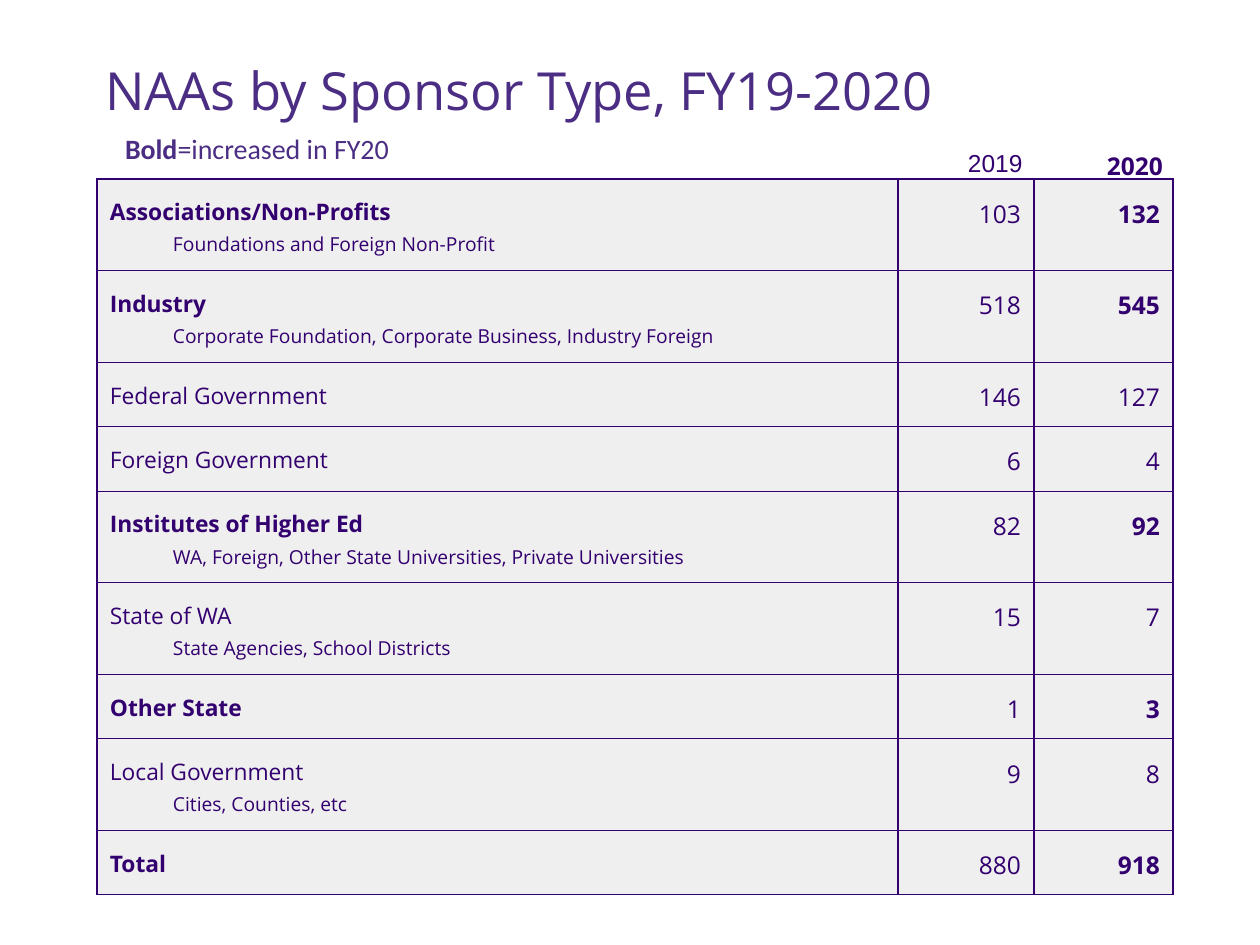
from lxml.etree import SubElement
from pptx import Presentation
from pptx.dml.color import RGBColor
from pptx.enum.text import MSO_ANCHOR as Anchor, MSO_AUTO_SIZE as AutoSize, PP_ALIGN as Align
from pptx.oxml.ns import qn
from pptx.util import Emu, Pt

SCALE = 914400 / 126
COLORS = {"title": "4B2E83", "text": "33006F", "border": "33006F", "cell": "EFEFEF"}
FONT = "Open Sans"
COLUMN_WIDTHS = (801, 136, 139)
SINGLE_HEIGHT, DOUBLE_HEIGHT = 63, 91
SPONSORS = [
    ("Associations/Non-Profits", "Foundations and Foreign Non-Profit", 103, 132),
    ("Industry", "Corporate Foundation, Corporate Business, Industry Foreign", 518, 545),
    ("Federal Government", None, 146, 127),
    ("Foreign Government", None, 6, 4),
    ("Institutes of Higher Ed",
     "WA, Foreign, Other State Universities, Private Universities", 82, 92),
    ("State of WA", "State Agencies, School Districts", 15, 7),
    ("Other State", None, 1, 3),
    ("Local Government", "Cities, Counties, etc", 9, 8),
    ("Total", None, 880, 918),
]


def px(length):
    """Turn pixels into EMU."""
    return Emu(round(length * SCALE))


def add_text(paragraph, text, size=14, color="text", font=FONT, bold=False,
             align=Align.LEFT, spacing=None, indent=0):
    """Add a formatted run to a paragraph and format the paragraph."""
    paragraph.alignment = align
    if spacing:
        paragraph.line_spacing = spacing
    if indent:
        properties = paragraph._p.get_or_add_pPr()
        properties.set("marL", str(px(indent)))
        properties.set("indent", "0")
    run = paragraph.add_run()
    run.text = text
    run.font.size = Pt(size)
    run.font.name = font
    run.font.bold = bold
    run.font.color.rgb = RGBColor.from_string(COLORS[color])


def format_frame(shape, anchor, margin_y):
    """Set wrapping, anchor and margins, and return the first paragraph."""
    frame = shape.text_frame
    frame.word_wrap = True
    frame.auto_size = AutoSize.NONE
    frame.vertical_anchor = anchor
    frame.margin_left = frame.margin_right = px(13)
    frame.margin_top = frame.margin_bottom = px(margin_y)
    return frame.paragraphs[0]


def add_title(slide, text):
    """Place and fill the title placeholder."""
    title = slide.shapes.title
    title.left, title.top, title.width, title.height = map(px, (92, -8, 1128, 136))
    paragraph = format_frame(title, Anchor.BOTTOM, 6)
    add_text(paragraph, text, size=30, color="title", spacing=0.9)


def add_box(slide, bounds, anchor=Anchor.BOTTOM, margin_y=13):
    """Add a text box and return its first paragraph."""
    box = slide.shapes.add_textbox(*map(px, bounds))
    return format_frame(box, anchor, margin_y)


def format_cell(cell):
    """Give a cell its borders, fill and margins."""
    properties = cell._tc.get_or_add_tcPr()
    for side in ("lnL", "lnR", "lnT", "lnB"):
        line = SubElement(properties, qn(f"a:{side}"), w=str(Pt(0.75)))
        fill = SubElement(line, qn("a:solidFill"))
        SubElement(fill, qn("a:srgbClr"), val=COLORS["border"])
    cell.fill.solid()
    cell.fill.fore_color.rgb = RGBColor.from_string(COLORS["cell"])
    cell.margin_left = cell.margin_right = px(13)
    cell.margin_top = cell.margin_bottom = px(13)


def add_sponsor_table(slide):
    """Add the table of sponsors, with increased rows in bold."""
    heights = [DOUBLE_HEIGHT if detail else SINGLE_HEIGHT for _, detail, _, _ in SPONSORS]
    table = slide.shapes.add_table(
        len(SPONSORS), len(COLUMN_WIDTHS), px(97), px(179),
        px(sum(COLUMN_WIDTHS)), px(sum(heights))).table
    table.first_row = table.horz_banding = False
    for column, width in zip(table.columns, COLUMN_WIDTHS):
        column.width = px(width)
    for row, height, (name, detail, before, after) in zip(table.rows, heights, SPONSORS):
        row.height = px(height)
        for cell in row.cells:
            format_cell(cell)
        increased = after > before
        label, old, new = (cell.text_frame for cell in row.cells)
        add_text(label.paragraphs[0], name, size=13, bold=increased, spacing=1.15)
        if detail:
            add_text(label.add_paragraph(), detail, size=11, spacing=1.15, indent=63)
        for frame, value, bold in ((old, before, False), (new, after, increased)):
            add_text(frame.paragraphs[0], str(value), bold=bold,
                     align=Align.RIGHT, spacing=1.15)


def main():
    """Build and save the slide."""
    presentation = Presentation()
    presentation.slide_width, presentation.slide_height = px(1260), px(945)
    slide = presentation.slides.add_slide(presentation.slide_layouts[5])
    add_title(slide, "NAAs by Sponsor Type, FY19-2020")
    add_sponsor_table(slide)
    add_text(add_box(slide, (955, 157, 111, 33)), "2019", font="Arial")
    add_text(add_box(slide, (1094, 160, 111, 33)), "2020", bold=True)
    legend = add_box(slide, (112, 129, 357, 43), Anchor.TOP, 6)
    for text, bold in (("Bold", True), ("=increased in FY20", False)):
        add_text(legend, text, size=16, color="title", font="Calibri",
                 bold=bold, spacing=0.9)
    presentation.save("out.pptx")


if __name__ == "__main__":
    main()
